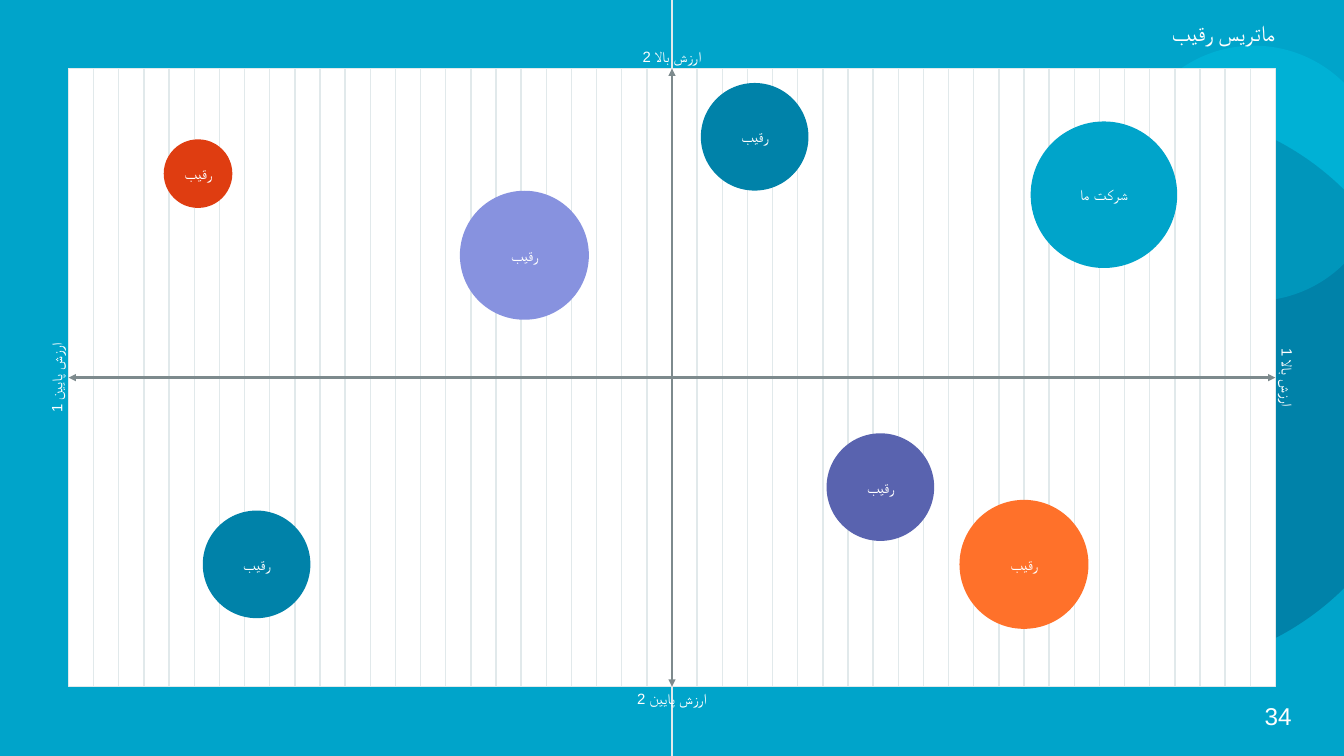
from dataclasses import dataclass
from typing import Any

from lxml import etree
from pptx import Presentation
from pptx import util as u
from pptx.dml.color import RGBColor
from pptx.enum import shapes, text
from pptx.oxml import ns

WIDTH = 10
HEIGHT = WIDTH * 9 / 16
COLUMNS, ROWS = 48, 24
LEFT, TOP, PANEL_WIDTH, PANEL_HEIGHT = 0.51, 0.51, 8.98, 4.6
COLUMN, ROW = PANEL_WIDTH / COLUMNS, PANEL_HEIGHT / ROWS
CENTRE_X, CENTRE_Y = LEFT + PANEL_WIDTH / 2, TOP + PANEL_HEIGHT / 2


@dataclass(frozen=True)
class Theme:
    background: str = "00A4CA"
    deep: str = "0082A9"
    glow: str = "00E1FF"
    white: str = "FFFFFF"
    grid: str = "E1E9EB"
    axis: str = "7D8A8D"
    lilac: str = "8792DF"
    indigo: str = "5963AF"
    orange: str = "FF712A"
    red: str = "DF3D11"
    title_font: str = "Roboto Condensed"
    body_font: str = "Roboto"
    script_font: str = "Arial"
    title_size: float = 12
    number_size: float = 13
    label_size: float = 8


THEME = Theme()


@dataclass(frozen=True)
class Bubble:
    """A circle centred on a grid position, its diameter in columns."""
    label: str
    column: float
    row: float
    diameter: float
    color: str


@dataclass(frozen=True)
class AxisLabel:
    label: str
    x: float
    y: float
    rotation: int = 0


BUBBLES = [
    Bubble("شرکت ما", 41.18, 4.9, 5.83, THEME.background),
    Bubble("رقیب", 18.13, 7.25, 5.13, THEME.lilac),
    Bubble("رقیب", 7.48, 19.25, 4.28, THEME.deep),
    Bubble("رقیب", 32.29, 16.25, 4.28, THEME.indigo),
    Bubble("رقیب", 38, 19.25, 5.13, THEME.orange),
    Bubble("رقیب", 27.29, 2.65, 4.28, THEME.deep),
    Bubble("رقیب", 5.15, 4.08, 2.73, THEME.red),
]

LABEL_WIDTH, LABEL_HEIGHT = 1.41, 0.18
OFFSET = LABEL_HEIGHT / 2
AXIS_LABELS = [
    AxisLabel("ارزش پایین 1", LEFT - OFFSET, CENTRE_Y, 270),
    AxisLabel("ارزش بالا 1", LEFT + PANEL_WIDTH + OFFSET, CENTRE_Y, 90),
    AxisLabel("ارزش پایین 2", CENTRE_X, TOP + PANEL_HEIGHT + OFFSET),
    AxisLabel("ارزش بالا 2", CENTRE_X, TOP - OFFSET),
]


def rgb(color: str) -> RGBColor:
    return RGBColor.from_string(color)


def write(shape: Any, words: str, size: float, font: str = THEME.body_font,
          align: Any = text.PP_ALIGN.CENTER) -> Any:
    """Write one right-to-left paragraph without margins and return it."""
    frame = shape.text_frame
    frame.word_wrap = True
    frame.auto_size = text.MSO_AUTO_SIZE.NONE
    frame.vertical_anchor = text.MSO_ANCHOR.MIDDLE
    frame.margin_left = frame.margin_right = frame.margin_top = frame.margin_bottom = 0
    para = frame.paragraphs[0]
    para.alignment = align
    para._p.get_or_add_pPr().set("rtl", "1")
    span = para.add_run()
    span.text = words
    span.font.size = u.Pt(size)
    span.font.name = font
    span.font.color.rgb = rgb(THEME.white)
    etree.SubElement(span._r.get_or_add_rPr(), ns.qn("a:cs"), typeface=THEME.script_font)
    return para


def add_text_box(page: Any, x: float, y: float, width: float, height: float) -> Any:
    return page.shapes.add_textbox(u.Inches(x), u.Inches(y), u.Inches(width), u.Inches(height))


def add_filled(page: Any, kind: Any, x: float, y: float, width: float, height: float,
               color: str) -> Any:
    shape = page.shapes.add_shape(kind, u.Inches(x), u.Inches(y),
                                  u.Inches(width), u.Inches(height))
    shape.shadow.inherit = False
    shape.fill.solid()
    shape.fill.fore_color.rgb = rgb(color)
    shape.line.fill.background()
    return shape


def add_line(owner: Any, start: tuple[float, float], end: tuple[float, float],
             color: str, weight: float) -> Any:
    line = owner.shapes.add_connector(shapes.MSO_CONNECTOR.STRAIGHT,
                                      *(u.Inches(value) for value in start + end))
    line.line.color.rgb = rgb(color)
    line.line.width = u.Pt(weight)
    etree.SubElement(line._element.spPr, ns.qn("a:effectLst"))
    return line


def add_cut_circle(page: Any, x: float, y: float, diameter: float, color: str) -> Any:
    """Add a circle cut off upright at the slide's right edge."""
    circle = add_filled(page, shapes.MSO_SHAPE.CHORD, x, y, diameter, diameter, color)
    circle.adjustments[0], circle.adjustments[1] = 27, 189
    return circle


def add_axis(page: Any, panel: Any, start: tuple[float, float], end: tuple[float, float],
             sides: tuple[int, int]) -> None:
    axis = add_line(page, start, end, THEME.axis, 1.5)
    axis.begin_connect(panel, sides[0])
    axis.end_connect(panel, sides[1])
    for arrowhead in ("a:headEnd", "a:tailEnd"):
        etree.SubElement(axis.line._get_or_add_ln(), ns.qn(arrowhead),
                         type="triangle", w="sm", len="sm")


def add_bubble(page: Any, bubble: Bubble) -> None:
    size = bubble.diameter * COLUMN
    x = LEFT + bubble.column * COLUMN - size / 2
    y = TOP + bubble.row * ROW - size / 2
    circle = add_filled(page, shapes.MSO_SHAPE.OVAL, x, y, size, size, bubble.color)
    write(circle, bubble.label, THEME.label_size)


def add_axis_label(page: Any, item: AxisLabel) -> None:
    box = add_text_box(page, item.x - LABEL_WIDTH / 2, item.y - LABEL_HEIGHT / 2,
                       LABEL_WIDTH, LABEL_HEIGHT)
    box.rotation = item.rotation
    write(box, item.label, THEME.label_size)


def add_title(page: Any, words: str) -> None:
    title = page.shapes.title
    title.left, title.top = u.Inches(LEFT), 0
    title.width, title.height = u.Inches(PANEL_WIDTH), u.Inches(TOP)
    para = write(title, words, THEME.title_size, THEME.title_font, text.PP_ALIGN.RIGHT)
    para.line_spacing = 0.9
    page.shapes._spTree.append(title._element)  # in front of the circles


def main() -> None:
    deck = Presentation()
    deck.slide_width, deck.slide_height = u.Inches(WIDTH), u.Inches(HEIGHT)
    page = deck.slides.add_slide(deck.slide_layouts[5])
    page.background.fill.solid()
    page.background.fill.fore_color.rgb = rgb(THEME.background)

    add_cut_circle(page, 6.45, 0.81, 4.17, THEME.deep)
    glow = add_cut_circle(page, 8.38, 0.34, 1.9, THEME.glow)
    tint = glow._element.spPr.find(ns.qn("a:solidFill"))[0]
    etree.SubElement(tint, ns.qn("a:alpha"), val="22000")
    add_title(page, "ماتریس رقیب")

    panel = add_filled(page, shapes.MSO_SHAPE.RECTANGLE, LEFT, TOP,
                       PANEL_WIDTH, PANEL_HEIGHT, THEME.white)
    panel.line.color.rgb = rgb(THEME.grid)
    panel.line.width = u.Pt(0.75)
    grid = page.shapes.add_group_shape()
    for column in range(1, COLUMNS):
        if column != COLUMNS // 2:
            x = LEFT + column * COLUMN
            add_line(grid, (x, TOP), (x, TOP + PANEL_HEIGHT), THEME.grid, 0.75)

    number = add_text_box(page, 9.41, 5.17, 0.38, 0.31)
    write(number, "34", THEME.number_size, align=text.PP_ALIGN.LEFT)

    add_line(page, (CENTRE_X, 0), (CENTRE_X, HEIGHT), THEME.grid, 0.75)
    add_axis(page, panel, (CENTRE_X, TOP), (CENTRE_X, TOP + PANEL_HEIGHT), (0, 2))
    add_axis(page, panel, (LEFT, CENTRE_Y), (LEFT + PANEL_WIDTH, CENTRE_Y), (1, 3))
    for item in AXIS_LABELS:
        add_axis_label(page, item)
    for bubble in BUBBLES:
        add_bubble(page, bubble)
    deck.save("out.pptx")


if __name__ == "__main__":
    main()
